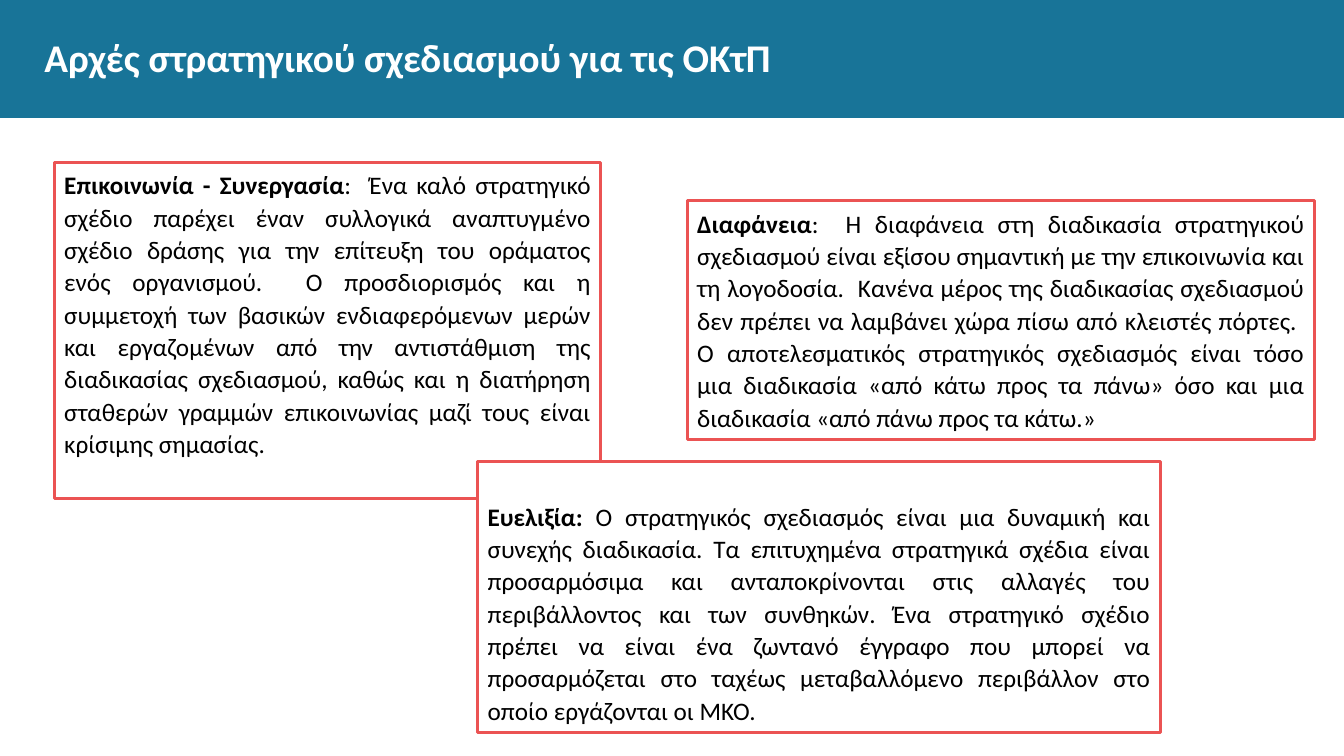
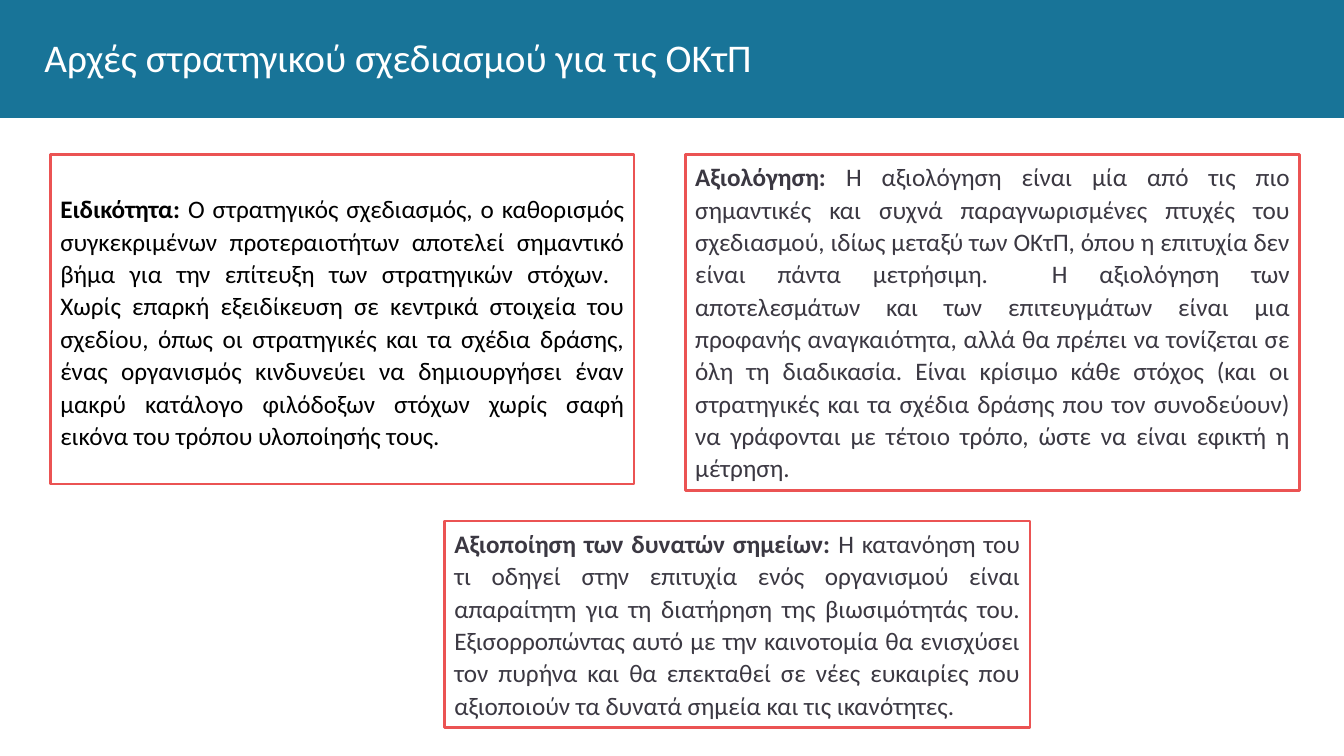
"""Build two slides on the principles of strategic planning for civil society organisations."""
import pptx
import pptx.dml.color
import pptx.enum.shapes
import pptx.enum.text
import pptx.util
from pptx.util import Cm

FONT = "Calibri"
BLUE, RED, WHITE, BLACK, GREY = "187498", "EB5353", "FFFFFF", "000000", "3B3842"
TITLE = "Αρχές στρατηγικού σχεδιασμού για τις ΟΚτΠ"
LINE_HEIGHT = 0.81

SLIDES = [
    {
        "bold_title": True,
        "boxes": [
            {
                "place": (1.37, 4.09, 13.77, 8.48), "color": BLACK, "blank_lines": 0,
                "heading": "Επικοινωνία - Συνεργασία",
                "body": ":  Ένα καλό στρατηγικό σχέδιο παρέχει έναν συλλογικά αναπτυγμένο σχέδιο δράσης "
                        "για την επίτευξη του οράματος ενός οργανισμού.  Ο προσδιορισμός και η συμμετοχή "
                        "των βασικών ενδιαφερόμενων μερών και εργαζομένων από την αντιστάθμιση της "
                        "διαδικασίας σχεδιασμού, καθώς και η διατήρηση σταθερών γραμμών επικοινωνίας "
                        "μαζί τους είναι κρίσιμης σημασίας.",
            },
            {
                "place": (17.32, 5.06, 15.8, 6.02), "color": BLACK, "blank_lines": 0,
                "heading": "Διαφάνεια",
                "body": ":  Η διαφάνεια στη διαδικασία στρατηγικού σχεδιασμού είναι εξίσου σημαντική "
                        "με την επικοινωνία και τη λογοδοσία.  Κανένα μέρος της διαδικασίας σχεδιασμού "
                        "δεν πρέπει να λαμβάνει χώρα πίσω από κλειστές πόρτες.  Ο αποτελεσματικός "
                        "στρατηγικός σχεδιασμός είναι τόσο μια διαδικασία «από κάτω προς τα πάνω» όσο "
                        "και μια διαδικασία «από πάνω προς τα κάτω.»",
            },
            {
                "place": (12.04, 11.63, 17.2, 6.83), "color": BLACK, "blank_lines": 1,
                "heading": "Ευελιξία: ",
                "body": "Ο στρατηγικός σχεδιασμός είναι μια δυναμική και συνεχής διαδικασία. Τα "
                        "επιτυχημένα στρατηγικά σχέδια είναι προσαρμόσιμα και ανταποκρίνονται στις "
                        "αλλαγές του περιβάλλοντος και των συνθηκών. Ένα στρατηγικό σχέδιο πρέπει να "
                        "είναι ένα ζωντανό έγγραφο που μπορεί να προσαρμόζεται στο ταχέως "
                        "μεταβαλλόμενο περιβάλλον στο οποίο εργάζονται οι ΜΚΟ.",
            },
        ],
    },
    {
        "bold_title": False,
        "boxes": [
            {
                "place": (1.27, 3.89, 14.71, 8.31), "color": BLACK, "blank_lines": 1,
                "heading": "Ειδικότητα: ",
                "body": "Ο στρατηγικός σχεδιασμός, ο καθορισμός συγκεκριμένων προτεραιοτήτων αποτελεί "
                        "σημαντικό βήμα για την επίτευξη των στρατηγικών στόχων.  Χωρίς επαρκή "
                        "εξειδίκευση σε κεντρικά στοιχεία του σχεδίου, όπως οι στρατηγικές και τα "
                        "σχέδια δράσης, ένας οργανισμός κινδυνεύει να δημιουργήσει έναν μακρύ κατάλογο "
                        "φιλόδοξων στόχων χωρίς σαφή εικόνα του τρόπου υλοποίησής τους.",
            },
            {
                "place": (17.27, 3.89, 15.49, 8.48), "color": GREY, "blank_lines": 0,
                "heading": "Αξιολόγηση: ",
                "body": "Η αξιολόγηση είναι μία από τις πιο σημαντικές και συχνά παραγνωρισμένες "
                        "πτυχές του σχεδιασμού, ιδίως μεταξύ των ΟΚτΠ, όπου η επιτυχία δεν είναι πάντα "
                        "μετρήσιμη.  Η αξιολόγηση των αποτελεσμάτων και των επιτευγμάτων είναι μια "
                        "προφανής αναγκαιότητα, αλλά θα πρέπει να τονίζεται σε όλη τη διαδικασία. "
                        "Είναι κρίσιμο κάθε στόχος (και οι στρατηγικές και τα σχέδια δράσης που τον "
                        "συνοδεύουν) να γράφονται με τέτοιο τρόπο, ώστε να είναι εφικτή η μέτρηση.",
            },
            {
                "place": (11.2, 13.13, 14.76, 5.21), "color": GREY, "blank_lines": 0,
                "heading": "Αξιοποίηση των δυνατών σημείων: ",
                "body": "Η κατανόηση του τι οδηγεί στην επιτυχία ενός οργανισμού είναι απαραίτητη για "
                        "τη διατήρηση της βιωσιμότητάς του. Εξισορροπώντας αυτό με την καινοτομία θα "
                        "ενισχύσει τον πυρήνα και θα επεκταθεί σε νέες ευκαιρίες που αξιοποιούν τα "
                        "δυνατά σημεία και τις ικανότητες.",
            },
        ],
    },
]


def rgb(value):
    return pptx.dml.color.RGBColor.from_string(value)


def add_rectangle(slide, place, fill):
    shape = slide.shapes.add_shape(
        pptx.enum.shapes.MSO_SHAPE.RECTANGLE, *(Cm(length) for length in place))
    shape.shadow.inherit = False
    shape.fill.solid()
    shape.fill.fore_color.rgb = rgb(fill)
    shape.line.fill.background()
    return shape


presentation = pptx.Presentation()
presentation.slide_width = Cm(33.87)
presentation.slide_height = Cm(19.05)

layout = presentation.slide_layouts.get_by_name("Title Only")
layout_title = layout.placeholders[0]
layout_title.left, layout_title.top = Cm(1.12), Cm(0.48)
layout_title.width, layout_title.height = Cm(31.65), Cm(1.88)

for number, content in enumerate(SLIDES):
    slide = presentation.slides.add_slide(layout)
    if number == 0:
        band = add_rectangle(slide, (0, 0, 33.87, 2.97), BLUE)
        layout.shapes.element.insert(2, band.element)

    title_frame = slide.shapes.title.text_frame
    title_frame.text = TITLE
    title_frame.vertical_anchor = pptx.enum.text.MSO_ANCHOR.MIDDLE
    title_frame.margin_left = title_frame.margin_right = 0
    title_frame.margin_top = title_frame.margin_bottom = 0
    paragraph = title_frame.paragraphs[0]
    paragraph.alignment = pptx.enum.text.PP_ALIGN.LEFT
    font = paragraph.runs[0].font
    font.name, font.size, font.bold = FONT, pptx.util.Pt(28), content["bold_title"]
    font.color.rgb = rgb(WHITE)

    for box in content["boxes"]:
        shape = add_rectangle(slide, box["place"], WHITE)
        shape.line.color.rgb = rgb(RED)
        shape.line.width = pptx.util.Pt(2)
        text_frame = shape.text_frame
        text_frame.word_wrap = True
        text_frame.vertical_anchor = pptx.enum.text.MSO_ANCHOR.TOP
        text_frame.margin_left = text_frame.margin_right = Cm(0.25)
        text_frame.margin_top = Cm(0.13 + box["blank_lines"] * LINE_HEIGHT)
        text_frame.margin_bottom = Cm(0.13)
        paragraph = text_frame.paragraphs[0]
        paragraph.alignment = pptx.enum.text.PP_ALIGN.JUSTIFY
        paragraph.line_spacing = 1.07
        for part in ("heading", "body"):
            run = paragraph.add_run()
            run.text = box[part]
            run.font.name, run.font.size = FONT, pptx.util.Pt(18)
            run.font.bold = part == "heading"
            run.font.color.rgb = rgb(box["color"])

presentation.save("out.pptx")
